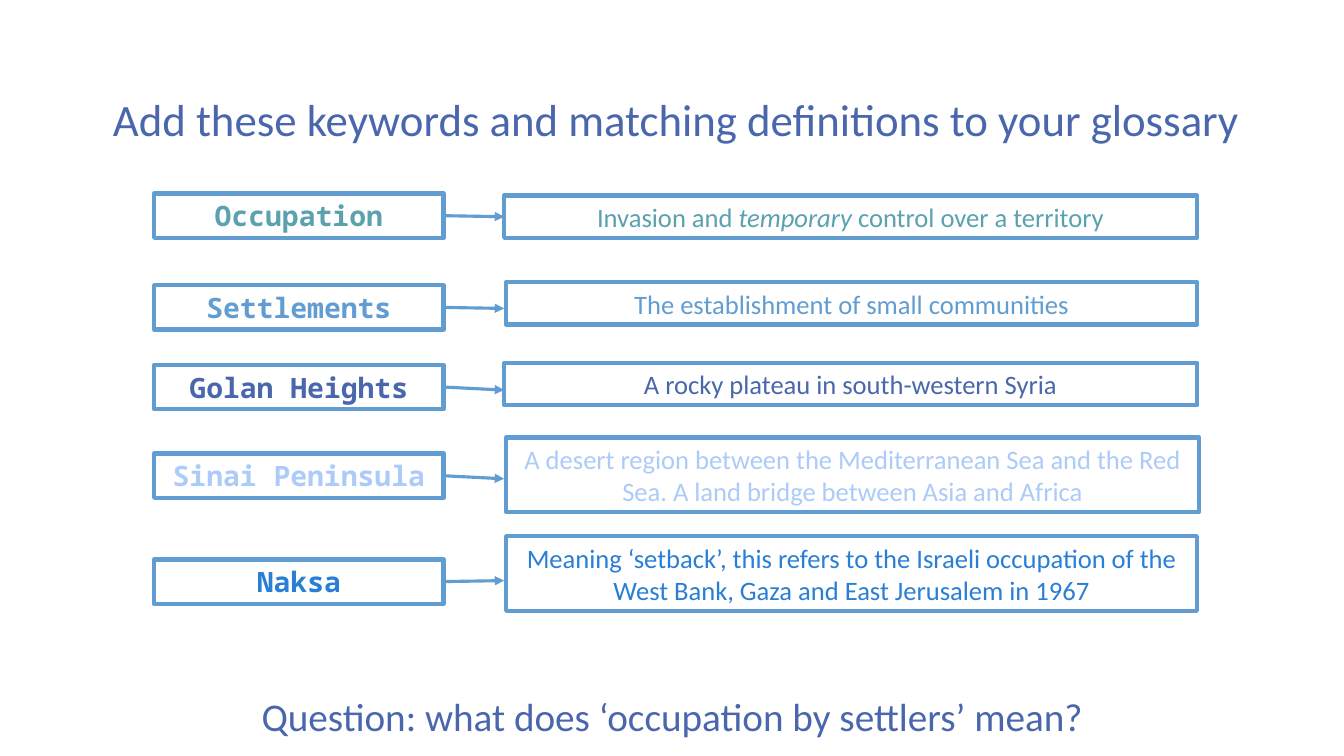
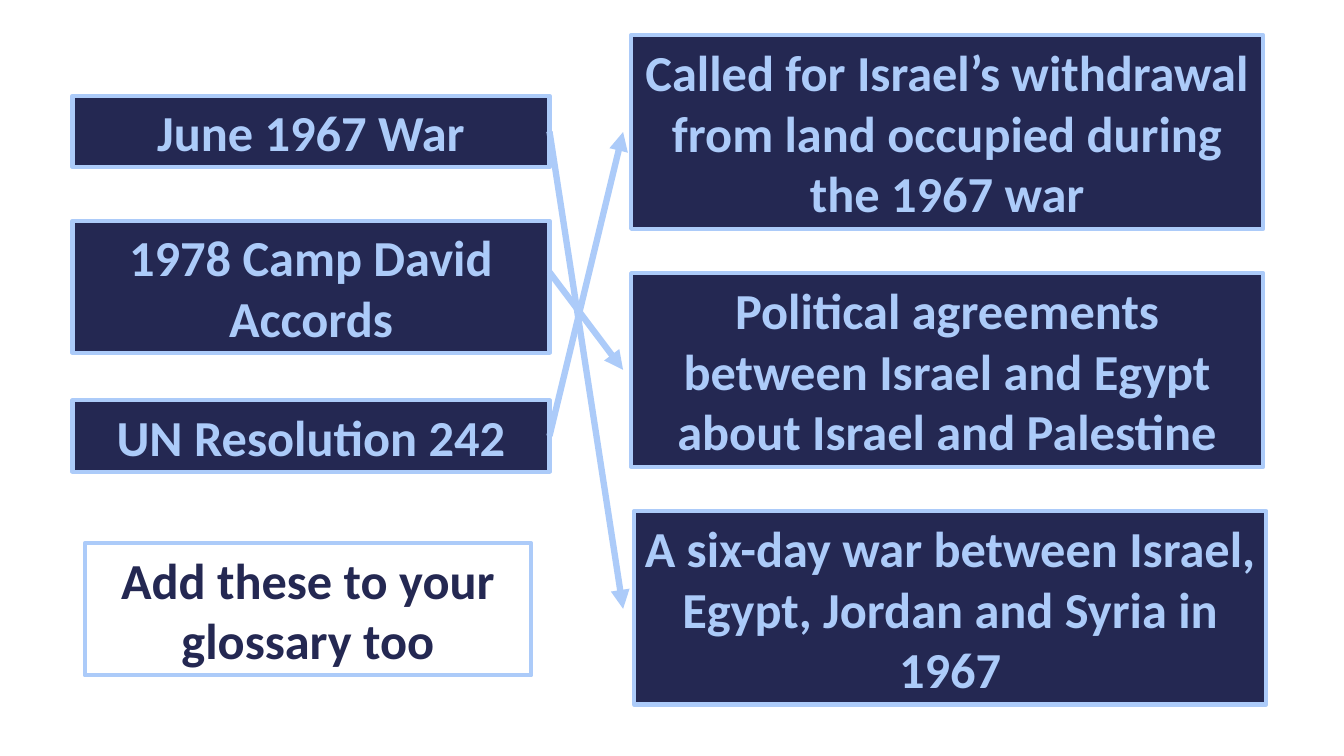
from lxml import etree
from pptx import Presentation
from pptx.dml.color import RGBColor
from pptx.enum.shapes import MSO_CONNECTOR, MSO_SHAPE
from pptx.enum.text import MSO_ANCHOR, MSO_AUTO_SIZE, PP_ALIGN
from pptx.oxml.ns import qn
from pptx.util import Inches, Pt

RECTANGLE = MSO_SHAPE.RECTANGLE
STRAIGHT = MSO_CONNECTOR.STRAIGHT
CENTER = PP_ALIGN.CENTER
MIDDLE = MSO_ANCHOR.MIDDLE
GROW = MSO_AUTO_SIZE.SHAPE_TO_FIT_TEXT
LEFT_SIDE, RIGHT_SIDE = 1, 3

INDIGO, BLUE, TEAL = "4A66AC", "629DD1", "5AA2AE"
PALE, BRIGHT, NAVY, WHITE = "ACCBF9", "297FD5", "242852", "FFFFFF"

HEADING = {"name": "Calibri", "size": Pt(32)}
QUESTION = {"name": "Calibri", "size": Pt(28)}
KEYWORD = {"name": "Noto Sans Mono", "size": Pt(20), "bold": True}
DEFINITION = {"name": "Calibri", "size": Pt(19)}
CARD = {"name": "Calibri", "size": Pt(36), "bold": True}


def rgb(value):
    return RGBColor.from_string(value)


class Lesson:
    def __init__(self):
        self.deck = Presentation()
        self.deck.slide_width = Inches(13.33)
        self.deck.slide_height = Inches(7.5)
        self.page = None

    def add_page(self):
        self.page = self.deck.slides.add_slide(self.deck.slide_layouts[6])

    def set_text(self, box, text, style, color):
        frame = box.text_frame
        settings = {"word_wrap": True, "auto_size": GROW, "vertical_anchor": MIDDLE}
        for name, value in settings.items():
            setattr(frame, name, value)
        para = frame.paragraphs[0]
        para.alignment = CENTER
        for index, piece in enumerate(text.split("*")):
            span = para.add_run()
            span.text = piece
            for name, value in style.items():
                setattr(span.font, name, value)
            span.font.italic = index % 2 == 1
            span.font.color.rgb = rgb(color)

    def label(self, place, text, style, color):
        box = self.page.shapes.add_textbox(*map(Inches, place))
        self.set_text(box, text, style, color)

    def frame(self, place, text, style, color, outline, fill=None):
        box = self.page.shapes.add_shape(RECTANGLE, *map(Inches, place))
        box.shadow.inherit = False
        if fill:
            box.fill.solid()
            box.fill.fore_color.rgb = rgb(fill)
        else:
            box.fill.background()
        box.line.color.rgb = rgb(outline)
        box.line.width = Pt(3)
        self.set_text(box, text, style, color)
        return box

    def arrow(self, start, end, color, width, source=None, target=None):
        line = self.page.shapes.add_connector(STRAIGHT, *map(Inches, start + end))
        if source is not None:
            line.begin_connect(source, RIGHT_SIDE)
        if target is not None:
            line.end_connect(target, LEFT_SIDE)
        line.line.color.rgb = rgb(color)
        line.line.width = Pt(width)
        properties = line._element.spPr
        etree.SubElement(properties.find(qn("a:ln")), qn("a:tailEnd"), type="triangle")
        etree.SubElement(properties, qn("a:effectLst"))

    def glossary_page(self):
        self.add_page()
        self.label((0.52, 0.86, 12.38, 0.64),
                   "Add these keywords and matching definitions to your glossary",
                   HEADING, INDIGO)
        rows = [
            ("Occupation", 1.92, TEAL, (5, 1.94, 6.87, 0.42), 2.15,
             "Invasion and *temporary* control over a territory"),
            ("Settlements", 2.83, BLUE, (5.02, 2.8, 6.85, 0.42), 3.06,
             "The establishment of small communities"),
            ("Golan Heights", 3.62, INDIGO, (5, 3.6, 6.87, 0.42), 3.87,
             "A rocky plateau in south-western Syria"),
            ("Sinai Peninsula", 4.5, PALE, (5.02, 4.34, 6.87, 0.74), 4.75,
             "A desert region between the Mediterranean Sea and the Red Sea. "
             "A land bridge between Asia and Africa"),
            ("Naksa", 5.55, BRIGHT, (5.02, 5.32, 6.85, 0.74), 5.76,
             "Meaning ‘setback’, this refers to the Israeli occupation of the "
             "West Bank, Gaza and East Jerusalem in 1967"),
        ]
        for index, (word, top, color, place, tip, meaning) in enumerate(rows):
            keyword = self.frame((1.53, top, 2.87, 0.44), word, KEYWORD, color, BLUE)
            definition = self.frame(place, meaning, DEFINITION, color, BLUE)
            target = definition if index == 0 else None
            self.arrow((4.4, tip), (5, tip), BLUE, 2.25, keyword, target)
        self.label((0.24, 6.82, 12.85, 0.57),
                   "Question: what does ‘occupation by settlers’ mean?",
                   QUESTION, INDIGO)

    def matching_page(self):
        self.add_page()
        meanings = [
            (6.26, "Called for Israel’s withdrawal from land occupied during the 1967 war"),
            (6.26, "Political agreements between Israel and Egypt about Israel and Palestine"),
            (6.29, "A six-day war between Israel, Egypt, Jordan and Syria in 1967"),
        ]
        for index, (left, meaning) in enumerate(meanings):
            self.frame((left, 0.35 + 2.36 * index, 6.27, 1.92),
                       meaning, CARD, PALE, PALE, NAVY)
        terms = [
            ("June 1967 War", 0.95, 0.71, 1.3, 6.04, True),
            ("1978 Camp David Accords", 2.19, 1.31, 2.7, 3.67, False),
            ("UN Resolution 242", 3.97, 0.71, 4.33, 1.31, True),
        ]
        for term, top, height, begin, tip, joined in terms:
            card = self.frame((0.72, top, 4.73, height), term, CARD, PALE, PALE, NAVY)
            source = card if joined else None
            self.arrow((5.45, begin), (6.18, tip), PALE, 4.5, source)
        self.frame((0.84, 5.39, 4.43, 1.31), "Add these to your glossary too",
                   CARD, NAVY, PALE, WHITE)


def main():
    lesson = Lesson()
    lesson.glossary_page()
    lesson.matching_page()
    lesson.deck.save("out.pptx")


if __name__ == "__main__":
    main()
